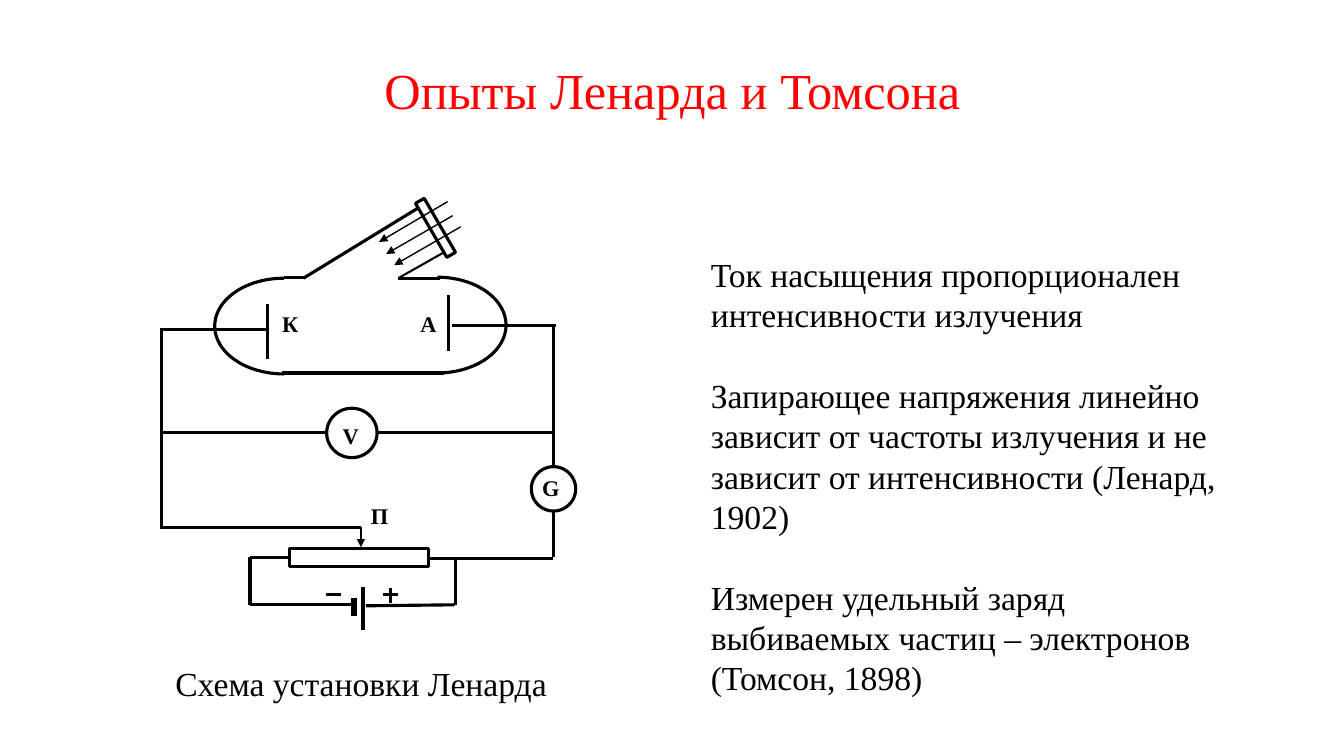
from lxml import etree
from pptx import Presentation
from pptx.dml.color import RGBColor
from pptx.enum.shapes import MSO_CONNECTOR as Connector, MSO_SHAPE as Shape
from pptx.enum.text import MSO_ANCHOR as Anchor, MSO_AUTO_SIZE as AutoSize, PP_ALIGN as Align
from pptx.oxml.ns import qn
from pptx.util import Inches, Pt

BLACK = RGBColor(0x00, 0x00, 0x00)
WHITE = RGBColor(0xFF, 0xFF, 0xFF)
RED = RGBColor(0xFF, 0x00, 0x00)
FONT = "Times New Roman"

HEADING = "Опыты Ленарда и Томсона"
FINDINGS = [
    "Ток насыщения пропорционален интенсивности излучения",
    "Запирающее напряжения линейно зависит от частоты излучения и не зависит "
    "от интенсивности (Ленард, 1902)",
    "Измерен удельный заряд выбиваемых частиц – электронов (Томсон, 1898)",
]
CAPTION = "Схема установки Ленарда"
LABELS = [
    ("V", 3.3, 4.14),
    ("G", 5.28, 4.65),
    ("К", 2.7, 3.03),
    ("А", 4.07, 3.03),
    ("П", 3.58, 4.93),
]

TUBE_ENDS = [
    ((2.13, 2.76, 1.37, 0.95), 90, 270),
    ((3.66, 2.75, 1.36, 0.95), 270, 90),
]
TUBE_WALLS = [
    (2.8, 3.7, 4.4, 3.7),
    (2.82, 2.75, 3.04, 2.75),
    (4.36, 2.76, 3.95, 2.76),
    (3.01, 2.76, 4.17, 2.05),
]
ELECTRODES = [
    (4.45, 2.93, 4.45, 3.48),
    (4.48, 3.23, 5.51, 3.23),
    (2.65, 3.02, 2.65, 3.56),
    (2.65, 3.27, 1.59, 3.27),
]
WIRES = [
    (1.6, 3.27, 1.6, 5.25),
    (5.49, 3.23, 5.49, 5.53),
    (1.6, 4.29, 5.49, 4.29),
    (4.25, 5.54, 5.48, 5.54),
    (1.59, 5.23, 3.58, 5.23),
    (2.86, 5.53, 2.48, 5.53),
    (2.48, 5.53, 2.48, 6),
    (2.48, 6, 3.48, 6),
    (3.63, 6.01, 4.51, 6),
    (4.52, 6, 4.52, 5.53),
]
BATTERY_PLATE = (3.6, 5.82, 3.6, 6.25)
POLARITY_SIGNS = [
    (3.8, 5.9, 3.95, 5.9),
    (3.87, 5.83, 3.87, 5.98),
    (3.23, 5.9, 3.38, 5.9),
]
SIDE_WALL = (3.95, 2.76, 4.48, 2.46)
BATTERY_CATHODE = (3.51, 5.93, 3.51, 6.11)
SLIDER = (3.58, 5.23, 3.58, 5.43)
RAYS = [
    (4.44, 2, 3.76, 2.4),
    (4.49, 2.14, 3.83, 2.52),
    (4.57, 2.25, 3.91, 2.63),
]
PARTS = [
    (Shape.RECTANGLE, (4.27, 1.95, 0.1, 0.62), 329.9),
    (Shape.OVAL, (3.24, 4.05, 0.5, 0.49), 0),
    (Shape.RECTANGLE, (2.87, 5.44, 1.38, 0.18), 0),
    (Shape.OVAL, (5.27, 4.63, 0.44, 0.44), 0),
]

deck = Presentation()
deck.slide_width = Inches(13.33)
deck.slide_height = Inches(7.5)
slide = deck.slides.add_slide(deck.slide_layouts[1])


def place(item, box):
    item.left, item.top, item.width, item.height = map(Inches, box)


def write(holder, paragraphs, size=24, color=BLACK, bold=False, align=Align.LEFT,
          anchor=Anchor.TOP, wrap=True, gap=0):
    frame = holder.text_frame
    frame.auto_size = AutoSize.NONE
    frame.word_wrap = wrap
    frame.vertical_anchor = anchor
    for index, text in enumerate(paragraphs):
        paragraph = frame.add_paragraph() if index else frame.paragraphs[0]
        paragraph.alignment = align
        paragraph.line_spacing = 1.0
        paragraph.space_before = Pt(gap if index else 0)
        properties = paragraph._p.get_or_add_pPr()
        properties.set("marL", "0")
        properties.set("indent", "0")
        etree.SubElement(properties, qn("a:buNone"))
        run = paragraph.add_run()
        run.text = text
        run.font.name = FONT
        run.font.size = Pt(size)
        run.font.bold = bold
        run.font.color.rgb = color


def draw_line(ends, weight=2.25, arrow=False):
    line = slide.shapes.add_connector(Connector.STRAIGHT, *map(Inches, ends))
    line.line.color.rgb = BLACK
    line.line.width = Pt(weight)
    if arrow:
        etree.SubElement(line.line._get_or_add_ln(), qn("a:tailEnd"), type="triangle")
    etree.SubElement(line._element.spPr, qn("a:effectLst"))


def draw_shape(kind, box, rotation=0, filled=True):
    part = slide.shapes.add_shape(kind, *map(Inches, box))
    part.shadow.inherit = False
    part.rotation = rotation
    part.line.color.rgb = BLACK
    part.line.width = Pt(2.25)
    if filled:
        part.fill.solid()
        part.fill.fore_color.rgb = WHITE
    else:
        part.fill.background()
    return part


for box, start, end in TUBE_ENDS:
    tube_end = draw_shape(Shape.ARC, box, filled=False)
    for index, degrees in enumerate((start, end)):
        tube_end.adjustments[index] = degrees * 0.6

for ends in TUBE_WALLS + ELECTRODES + WIRES + [BATTERY_PLATE] + POLARITY_SIGNS:
    draw_line(ends)
draw_line(SIDE_WALL, weight=1.5)
draw_line(BATTERY_CATHODE, weight=4.5)
for kind, box, rotation in PARTS:
    draw_shape(kind, box, rotation)
draw_line(SLIDER, weight=1.5, arrow=True)
for ray in RAYS:
    draw_line(ray, weight=1, arrow=True)

for text, left, top in LABELS:
    label = slide.shapes.add_textbox(*map(Inches, (left, top, 0.5, 0.5)))
    write(label, [text], size=16, bold=True)

title, body = slide.placeholders
place(title, (3.68, 0.53, 5.98, 0.71))
write(title, [HEADING], size=36, color=RED, align=Align.CENTER, anchor=Anchor.MIDDLE, wrap=False)
place(body, (6.95, 2.47, 5.52, 4.54))
write(body, FINDINGS, gap=28.8)

caption = slide.shapes.add_textbox(*map(Inches, (1.64, 6.53, 3.92, 0.5)))
write(caption, [CAPTION], wrap=False)

deck.save("out.pptx")
